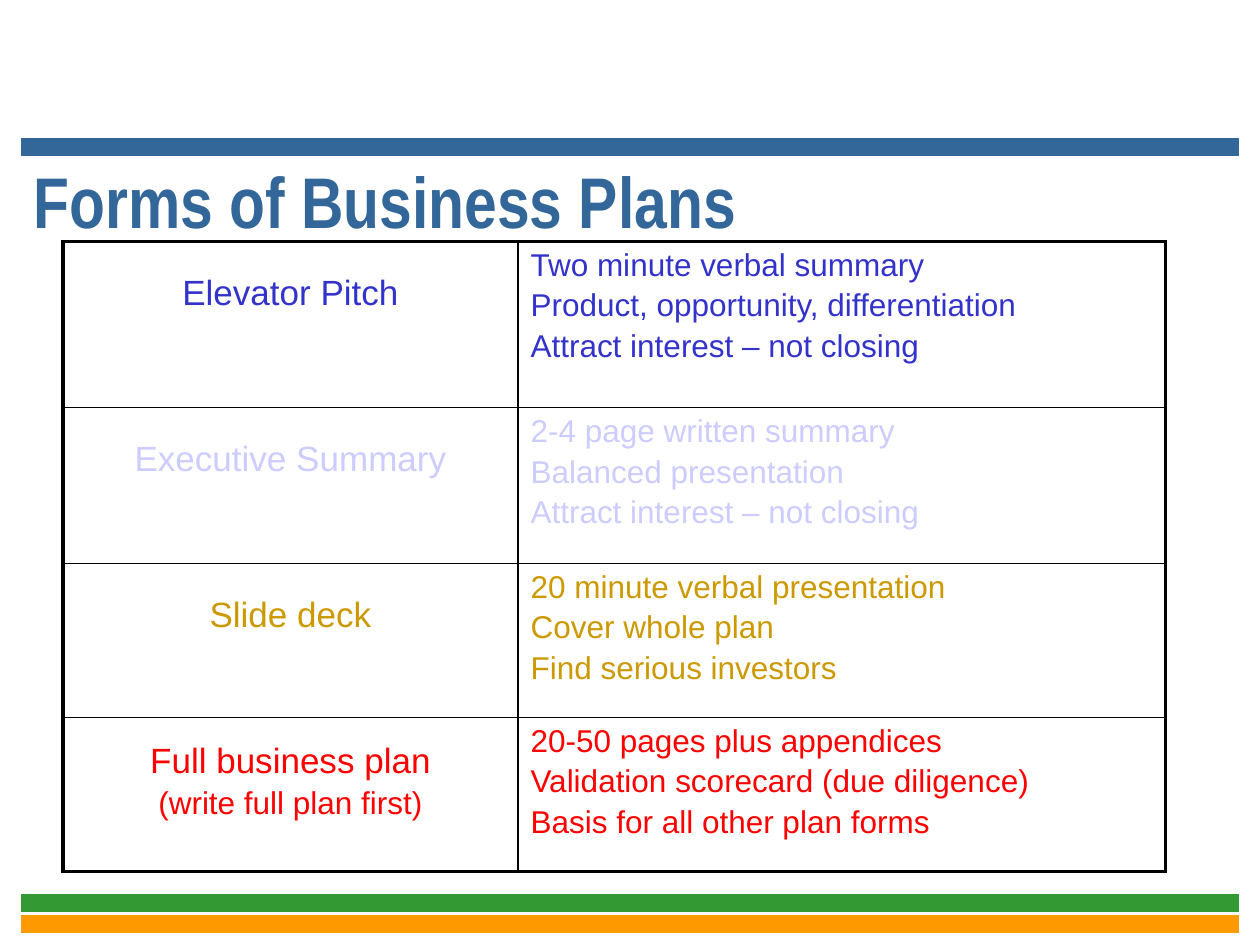
from dataclasses import dataclass

import pptx
import pptx.dml.color
import pptx.enum.text
import pptx.oxml
import pptx.oxml.ns
import pptx.util

Pt = pptx.util.Pt
RGBColor = pptx.dml.color.RGBColor
PP_ALIGN = pptx.enum.text.PP_ALIGN
MSO_ANCHOR = pptx.enum.text.MSO_ANCHOR

STEEL_BLUE = RGBColor(0x33, 0x66, 0x99)
GREEN = RGBColor(0x33, 0x99, 0x33)
ORANGE = RGBColor(0xFF, 0x99, 0x00)
BLUE = RGBColor(0x33, 0x33, 0xCC)
LAVENDER = RGBColor(0xCC, 0xCC, 0xFF)
GOLD = RGBColor(0xCC, 0x99, 0x00)
RED = RGBColor(0xFF, 0x00, 0x00)
BLACK = RGBColor(0x00, 0x00, 0x00)

COLUMN_WIDTHS = (260, 370)
INNER_BORDER = 1
OUTER_BORDER = 2.25
NAME_SIZE = 20
DETAIL_SIZE = 18


@dataclass(frozen=True)
class Band:
    y: float
    color: RGBColor


@dataclass(frozen=True)
class PlanForm:
    name: str
    details: tuple[str, ...]
    color: RGBColor
    height: float
    name_offset: float = 18.5
    note: str = ""


BANDS = (Band(84, STEEL_BLUE), Band(528, ORANGE), Band(516, GREEN))

PLAN_FORMS = (
    PlanForm("Elevator Pitch",
             ("Two minute verbal summary",
              "Product, opportunity, differentiation",
              "Attract interest – not closing"), BLUE, 95),
    PlanForm("Executive Summary",
             ("2-4 page written summary",
              "Balanced presentation",
              "Attract interest – not closing"), LAVENDER, 89),
    PlanForm("Slide deck",
             ("20 minute verbal presentation",
              "Cover whole plan",
              "Find serious investors"), GOLD, 88),
    PlanForm("Full business plan",
             ("20-50 pages plus appendices",
              "Validation scorecard (due diligence)",
              "Basis for all other plan forms"), RED, 88,
             name_offset=14, note="(write full plan first)"),
)


def add_band(slide, band: Band) -> None:
    line = slide.shapes.add_connector(
        pptx.enum.shapes.MSO_CONNECTOR.STRAIGHT,
        Pt(12), Pt(band.y), Pt(708), Pt(band.y))
    line.line.color.rgb = band.color
    line.line.width = Pt(10)
    properties = line.element.find(pptx.oxml.ns.qn("p:spPr"))
    properties.append(pptx.oxml.parse_xml(
        f'<a:effectLst {pptx.oxml.ns.nsdecls("a")}/>'))


def add_run(paragraph, text: str, font_name: str, size: float,
            color: RGBColor, bold: bool = False) -> None:
    run = paragraph.add_run()
    run.text = text
    run.font.name = font_name
    run.font.size = Pt(size)
    run.font.bold = bold
    run.font.color.rgb = color


def set_title(slide) -> None:
    title = slide.shapes.title
    title.left, title.top, title.width, title.height = (
        Pt(12), Pt(90), Pt(720), Pt(48))
    frame = title.text_frame
    frame.word_wrap = True
    frame.auto_size = pptx.enum.text.MSO_AUTO_SIZE.NONE
    frame.vertical_anchor = MSO_ANCHOR.MIDDLE
    paragraph = frame.paragraphs[0]
    paragraph.alignment = PP_ALIGN.LEFT
    add_run(paragraph, "Forms of Business Plans", "Arial Narrow", 41,
            STEEL_BLUE, bold=True)


def set_borders(cell, row: int, column: int) -> None:
    """Draw thick lines on the table's outline and thin ones inside."""
    outer_edges = {
        "lnL": column == 0,
        "lnR": column == len(COLUMN_WIDTHS) - 1,
        "lnT": row == 0,
        "lnB": row == len(PLAN_FORMS) - 1,
    }
    properties = cell._tc.get_or_add_tcPr()
    for tag, is_outer in outer_edges.items():
        width = Pt(OUTER_BORDER if is_outer else INNER_BORDER)
        properties.append(pptx.oxml.parse_xml(
            f'<a:{tag} {pptx.oxml.ns.nsdecls("a")} w="{width}">'
            f'<a:solidFill><a:srgbClr val="{BLACK}"/></a:solidFill>'
            f'</a:{tag}>'))


def fill_cell(cell, lines: list[tuple[str, float]], color: RGBColor,
              alignment: PP_ALIGN, top_margin: float) -> None:
    cell.fill.background()
    cell.vertical_anchor = MSO_ANCHOR.TOP
    cell.margin_top = Pt(top_margin)
    frame = cell.text_frame
    for index, (text, size) in enumerate(lines):
        paragraph = frame.add_paragraph() if index else frame.paragraphs[0]
        paragraph.alignment = alignment
        if index:
            paragraph.space_before = Pt(3)
        add_run(paragraph, text, "Arial", size, color)


def add_plan_table(slide) -> None:
    table = slide.shapes.add_table(
        len(PLAN_FORMS), len(COLUMN_WIDTHS), Pt(36), Pt(138),
        Pt(sum(COLUMN_WIDTHS)),
        Pt(sum(form.height for form in PLAN_FORMS))).table
    table.first_row = False
    table.horz_banding = False
    for column, width in zip(table.columns, COLUMN_WIDTHS):
        column.width = Pt(width)
    for row, form in enumerate(PLAN_FORMS):
        table.rows[row].height = Pt(form.height)
        for column in range(len(COLUMN_WIDTHS)):
            set_borders(table.cell(row, column), row, column)
        name_lines = [(form.name, NAME_SIZE)]
        if form.note:
            name_lines.append((form.note, DETAIL_SIZE))
        detail_lines = [(detail, DETAIL_SIZE) for detail in form.details]
        fill_cell(table.cell(row, 0), name_lines, form.color,
                  PP_ALIGN.CENTER, form.name_offset)
        fill_cell(table.cell(row, 1), detail_lines, form.color,
                  PP_ALIGN.LEFT, 3.6)


def main() -> None:
    presentation = pptx.Presentation()
    presentation.slide_width = Pt(720)
    presentation.slide_height = Pt(540)
    title_only = presentation.slide_layouts[5]
    slide = presentation.slides.add_slide(title_only)
    for band in BANDS:
        add_band(slide, band)
    set_title(slide)
    add_plan_table(slide)
    presentation.save("out.pptx")


if __name__ == "__main__":
    main()
